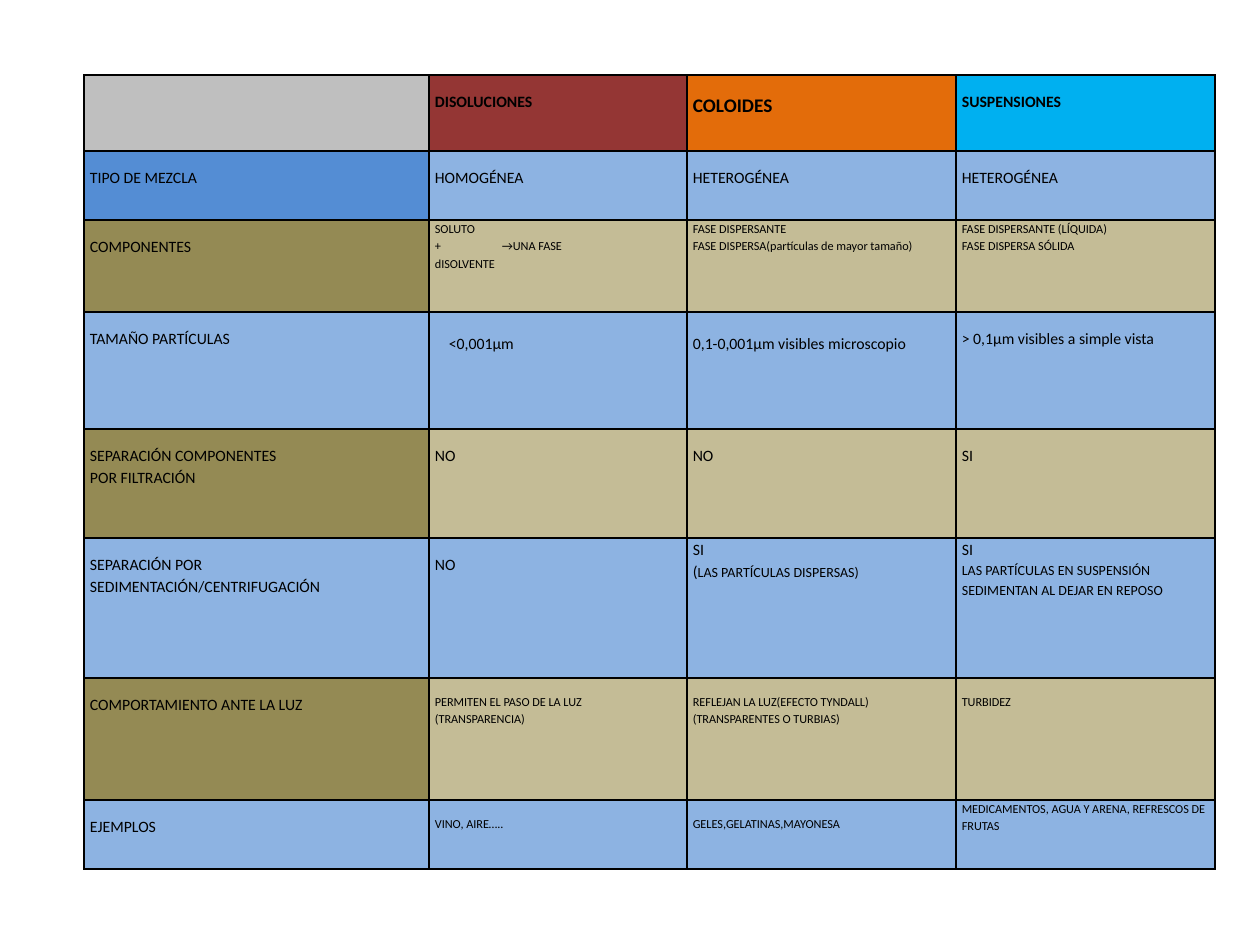
from lxml import etree
from pptx import Presentation
from pptx.dml.color import RGBColor
from pptx.oxml.ns import qn
from pptx.util import Pt

PX = 914400 // 126
FONT = "Calibri"
BLACK = RGBColor(0x00, 0x00, 0x00)
GREY = RGBColor(0xBF, 0xBF, 0xBF)
RED = RGBColor(0x94, 0x36, 0x34)
ORANGE = RGBColor(0xE3, 0x6C, 0x0A)
CYAN = RGBColor(0x00, 0xB0, 0xF0)
BLUE = RGBColor(0x54, 0x8D, 0xD4)
LIGHT_BLUE = RGBColor(0x8D, 0xB3, 0xE2)
OLIVE = RGBColor(0x94, 0x8A, 0x54)
TAN = RGBColor(0xC4, 0xBC, 0x96)

LEFT, TOP = 84, 75
COLUMNS = [345, 258, 269, 259]
ROWS = [76, 69, 92, 117, 109, 140, 122, 69]
SIDE_MARGIN = 6

HEAD = {"bold": True}
SMALL = {"size": 7}
SMALL_TOP = {"size": 7, "top": 0}
LOWER = {"top": 20}

CONTENT = [
    [("", HEAD), ("DISOLUCIONES", HEAD), ("COLOIDES", {"bold": True, "size": 11}),
     ("SUSPENSIONES", HEAD)],
    [("TIPO DE MEZCLA", {}), ("HOMOGÉNEA", {}), ("HETEROGÉNEA", {}), ("HETEROGÉNEA", {})],
    [("COMPONENTES", {}),
     ("SOLUTO\n+\t→UNA FASE\ndISOLVENTE", {**SMALL_TOP, "tab": 67}),
     ("FASE DISPERSANTE\nFASE DISPERSA(partículas de mayor tamaño)", SMALL_TOP),
     ("FASE DISPERSANTE (LÍQUIDA)\nFASE DISPERSA SÓLIDA", SMALL_TOP)],
    [("TAMAÑO PARTÍCULAS", {}), ("<0,001µm", {**LOWER, "indent": 14}),
     ("0,1-0,001µm visibles microscopio", LOWER),
     ("> 0,1µm visibles a simple vista", {})],
    [("SEPARACIÓN COMPONENTES\nPOR FILTRACIÓN", {}), ("NO", {}), ("NO", {}), ("SI", {})],
    [("SEPARACIÓN POR SEDIMENTACIÓN/CENTRIFUGACIÓN", {}), ("NO", {}),
     ([[("SI", 9)], [("(", 9), ("LAS PARTÍCULAS DISPERSAS)", 8)]], {"top": 0}),
     ([[("SI", 9)], [("LAS PARTÍCULAS EN SUSPENSIÓN SEDIMENTAN AL DEJAR EN REPOSO", 8)]],
      {"top": 0})],
    [("COMPORTAMIENTO ANTE LA LUZ", {}),
     ("PERMITEN EL PASO DE LA LUZ\n(TRANSPARENCIA)", SMALL),
     ("REFLEJAN LA LUZ(EFECTO TYNDALL)(TRANSPARENTES O TURBIAS)", SMALL),
     ("TURBIDEZ", SMALL)],
    [("EJEMPLOS", {}), ("VINO, AIRE…..", SMALL), ("GELES,GELATINAS,MAYONESA", SMALL),
     ("MEDICAMENTOS, AGUA Y ARENA, REFRESCOS DE FRUTAS", SMALL_TOP)],
]

BLUE_ROW = [LIGHT_BLUE] * 4
OLIVE_ROW = [OLIVE] + [TAN] * 3
FILLS = [[GREY, RED, ORANGE, CYAN], [BLUE] + [LIGHT_BLUE] * 3]
FILLS += [OLIVE_ROW, BLUE_ROW] * 3


def write(cell, text, size=9, bold=False, top=15, indent=0, tab=None):
    cell.margin_left = cell.margin_right = SIDE_MARGIN * PX
    cell.margin_top, cell.margin_bottom = top * PX, 0
    lines = [[(line, size)] for line in text.split("\n")] if isinstance(text, str) else text
    tf = cell.text_frame
    for i, runs in enumerate(lines):
        p = tf.paragraphs[0] if i == 0 else tf.add_paragraph()
        p.line_spacing = 1.15
        pPr = p._p.get_or_add_pPr()
        if indent:
            pPr.set("marL", str(indent * PX))
        if tab:
            tabs = etree.SubElement(pPr, qn("a:tabLst"))
            etree.SubElement(tabs, qn("a:tab"), pos=str(tab * PX), algn="l")
        for words, points in runs:
            if words:
                r = p.add_run()
                r.text = words
                r.font.name = FONT
                r.font.size = Pt(points)
                r.font.bold = bold
                r.font.color.rgb = BLACK


def add_borders(cell):
    tcPr = cell._tc.get_or_add_tcPr()
    for i, side in enumerate(("a:lnL", "a:lnR", "a:lnT", "a:lnB")):
        ln = etree.Element(qn(side), w=str(Pt(1)))
        fill = etree.SubElement(ln, qn("a:solidFill"))
        etree.SubElement(fill, qn("a:srgbClr"), val=str(BLACK))
        tcPr.insert(i, ln)


def main():
    prs = Presentation()
    prs.slide_width, prs.slide_height = 1260 * PX, 945 * PX
    s = prs.slides.add_slide(prs.slide_layouts[6])
    table = s.shapes.add_table(len(ROWS), len(COLUMNS), LEFT * PX, TOP * PX,
                               sum(COLUMNS) * PX, sum(ROWS) * PX).table
    for column, width in zip(table.columns, COLUMNS):
        column.width = width * PX
    for row, height, contents, fills in zip(table.rows, ROWS, CONTENT, FILLS):
        row.height = height * PX
        for cell, (text, style), color in zip(row.cells, contents, fills):
            cell.fill.solid()
            cell.fill.fore_color.rgb = color
            add_borders(cell)
            write(cell, text, **style)
    prs.save("out.pptx")


if __name__ == "__main__":
    main()
